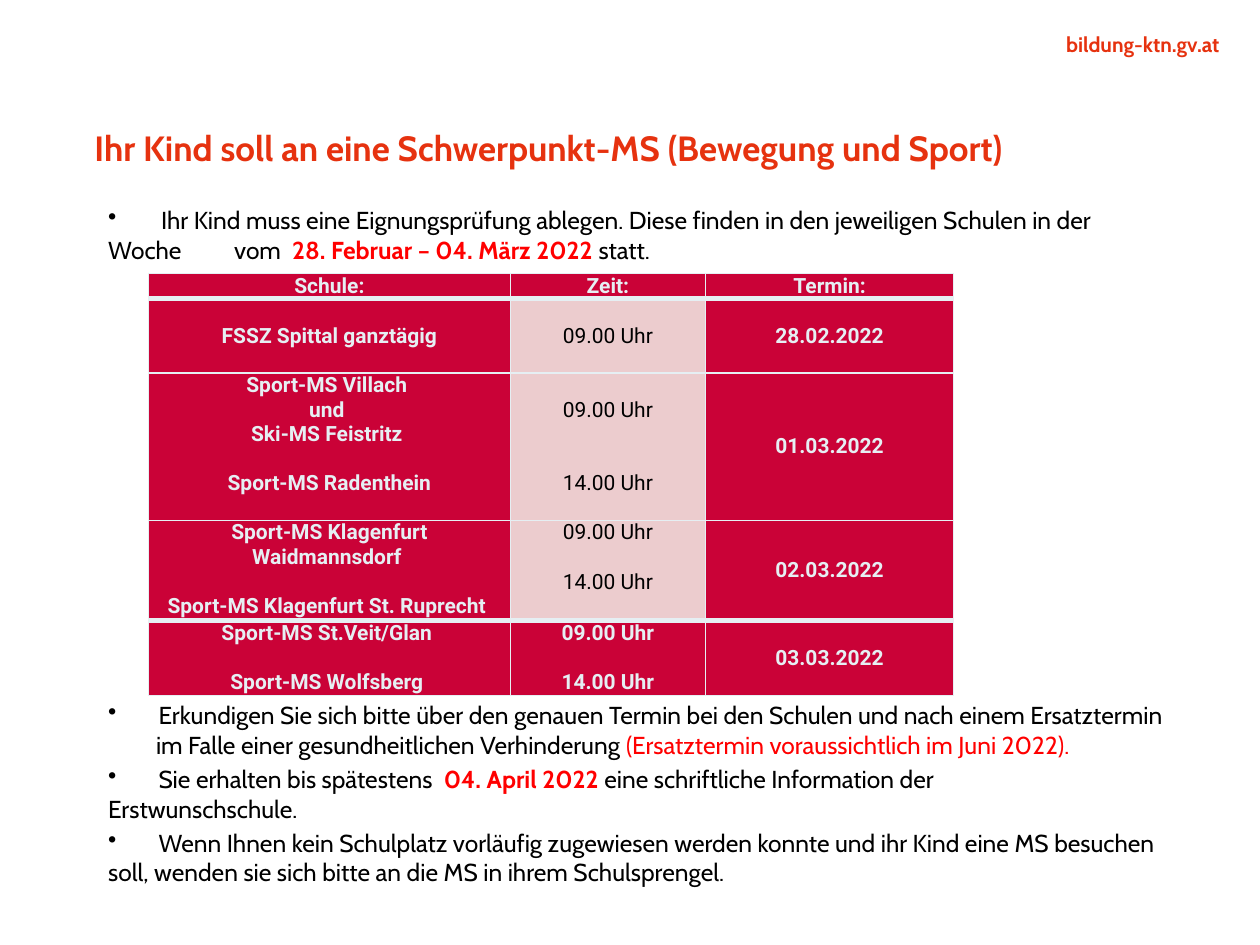
from dataclasses import dataclass

from lxml.etree import SubElement
from pptx import Presentation
from pptx.dml.color import RGBColor
from pptx.enum.text import MSO_ANCHOR, PP_ALIGN
from pptx.oxml.ns import qn
from pptx.util import Inches, Pt

COLORS = {"orange": "E6320F", "black": "000000", "red": "FF0000",
          "crimson": "CA0237", "rose": "ECCCCE", "pale": "E6EFF3"}
COLUMN_WIDTHS = (2.87, 1.55, 1.97)
ROW_HEIGHTS = (0.19, 0.59, 1.17, 0.78, 0.58)
THICK_EDGES = (1, 4)
LINE_GAP = 14.06


@dataclass(frozen=True)
class Span:
    text: str
    color: str = "black"
    bold: bool = False
    size: float = 14
    font: str = "Cabin"


@dataclass(frozen=True)
class Bullet:
    spans: tuple[Span, ...]
    tab: float = 0.4
    hanging: float = 0


@dataclass(frozen=True)
class Entry:
    """Cell text: blocks are set apart by gap lines."""
    blocks: tuple[tuple[str, ...], ...]
    gap: int = 1
    anchor: MSO_ANCHOR = MSO_ANCHOR.TOP
    light: bool = False


MIDDLE = MSO_ANCHOR.MIDDLE


def single(text: str, light: bool = False) -> Entry:
    return Entry(((text,),), anchor=MIDDLE, light=light)


ROWS = (
    (single("Schule:"), single("Zeit:"), single("Termin:")),
    (single("FSSZ Spittal ganztägig"), single("09.00 Uhr", True), single("28.02.2022")),
    (Entry((("Sport-MS Villach ", "und ", "Ski-MS Feistritz "), ("Sport-MS Radenthein",))),
     Entry((("09.00 Uhr",), ("14.00 Uhr",)), 2, MIDDLE, True), single("01.03.2022")),
    (Entry((("Sport-MS Klagenfurt Waidmannsdorf ",), ("Sport-MS Klagenfurt St. Ruprecht ",))),
     Entry((("09.00 Uhr",), ("14.00 Uhr",)), light=True), single("02.03.2022")),
    (Entry((("Sport-MS St.Veit/Glan ",), ("Sport-MS Wolfsberg ",))),
     Entry((("09.00 Uhr",), ("14.00 Uhr",))), single("03.03.2022")),
)

EXAM = (
    Bullet((Span("\tIhr Kind muss eine Eignungsprüfung ablegen. Diese finden in den "
                 "jeweiligen Schulen in der Woche\tvom  "),
            Span("28. Februar – 04. März 2022 ", "red", True), Span("statt.")), tab=0.42),
)
ADVICE = (
    Bullet((Span("\tErkundigen Sie sich bitte über den genauen Termin bei den Schulen und "
                 "nach einem Ersatztermin im Falle einer gesundheitlichen Verhinderung "),
            Span("(Ersatztermin voraussichtlich im Juni 2022).", "red")), hanging=0.38),
    Bullet((Span("\tSie erhalten bis spätestens  "), Span("04. April 2022 ", "red", True),
            Span("eine schriftliche Information der \tErstwunschschule."))),
    Bullet((Span("\tWenn Ihnen kein Schulplatz vorläufig zugewiesen werden konnte und ihr "
                 "Kind eine MS besuchen \tsoll, wenden sie sich bitte an die MS in ihrem "
                 "Schulsprengel."),)),
)


def rgb(name: str) -> RGBColor:
    return RGBColor.from_string(COLORS[name])


def add_span(para, span: Span) -> None:
    run = para.add_run()
    run.text = span.text
    run.font.name, run.font.size, run.font.bold = span.font, Pt(span.size), span.bold
    run.font.color.rgb = rgb(span.color)


def add_box(page, left: float, top: float, width: float, height: float, inset: bool):
    box = page.shapes.add_textbox(Inches(left), Inches(top), Inches(width), Inches(height))
    frame = box.text_frame
    frame.word_wrap = True
    frame.margin_left = frame.margin_right = Inches(0.1 if inset else 0)
    frame.margin_top = frame.margin_bottom = Inches(0.05 if inset else 0)
    return frame


def next_para(frame, first: bool):
    return frame.paragraphs[0] if first else frame.add_paragraph()


def add_bullets(page, top: float, height: float, bullets: tuple[Bullet, ...]) -> None:
    frame = add_box(page, 0.76, top, 8.58, height, inset=True)
    for index, bullet in enumerate(bullets):
        para = next_para(frame, index == 0)
        properties = para._p.get_or_add_pPr()
        properties.set("marL", str(Inches(bullet.hanging)))
        properties.set("indent", str(-Inches(bullet.hanging)))
        SubElement(properties, qn("a:buChar"), char="•")
        tabs = SubElement(properties, qn("a:tabLst"))
        SubElement(tabs, qn("a:tab"), pos=str(Inches(bullet.tab)), algn="l")
        if index:
            para.space_before = Pt(2.8)
        for span in bullet.spans:
            add_span(para, span)


def add_borders(cell, row: int) -> None:
    properties = cell._tc.get_or_add_tcPr()
    widths = {"lnL": 1, "lnR": 1, "lnT": 3 if row in THICK_EDGES else 1,
              "lnB": 3 if row + 1 in THICK_EDGES else 1}
    for side, width in widths.items():
        line = SubElement(properties, qn(f"a:{side}"), w=str(Pt(width)))
        fill = SubElement(line, qn("a:solidFill"))
        SubElement(fill, qn("a:srgbClr"), val=COLORS["pale"])


def fill_cell(cell, entry: Entry, row: int) -> None:
    add_borders(cell, row)
    cell.fill.solid()
    cell.fill.fore_color.rgb = rgb("rose" if entry.light else "crimson")
    cell.margin_left = cell.margin_right = Inches(0.07)
    cell.margin_top = cell.margin_bottom = Inches(0)
    cell.vertical_anchor = entry.anchor
    for block_index, block in enumerate(entry.blocks):
        for line_index, text in enumerate(block):
            para = next_para(cell.text_frame, block_index + line_index == 0)
            para.alignment = PP_ALIGN.CENTER
            if block_index and not line_index:
                para.space_before = Pt(LINE_GAP * entry.gap)
            color = "black" if entry.light else "pale"
            add_span(para, Span(text, color, not entry.light, 12, "Roboto"))


def add_schedule(page) -> None:
    table = page.shapes.add_table(
        len(ROWS), len(COLUMN_WIDTHS), Inches(1.18), Inches(2.17),
        Inches(sum(COLUMN_WIDTHS)), Inches(sum(ROW_HEIGHTS))).table
    for column, width in zip(table.columns, COLUMN_WIDTHS):
        column.width = Inches(width)
    for row, (height, entries) in enumerate(zip(ROW_HEIGHTS, ROWS)):
        table.rows[row].height = Inches(height)
        for column, entry in enumerate(entries):
            fill_cell(table.cell(row, column), entry, row)


def main() -> None:
    deck = Presentation()
    deck.slide_width, deck.slide_height = Inches(10), Inches(7.5)
    page = deck.slides.add_slide(deck.slide_layouts[6])
    address = add_box(page, 7.27, 0.25, 2.41, 0.2, inset=False).paragraphs[0]
    address.alignment = PP_ALIGN.RIGHT
    add_span(address, Span("bildung-ktn.gv.at", "orange", True, 12))
    title = add_box(page, 0.75, 0.92, 8.9, 1.25, inset=False).paragraphs[0]
    title.line_spacing = Pt(30)
    add_span(title, Span("Ihr Kind soll an eine Schwerpunkt-MS (Bewegung und Sport)",
                         "orange", True, 20))
    add_bullets(page, 1.58, 0.57, EXAM)
    add_schedule(page)
    add_bullets(page, 5.51, 1.66, ADVICE)
    deck.save("out.pptx")


if __name__ == "__main__":
    main()
